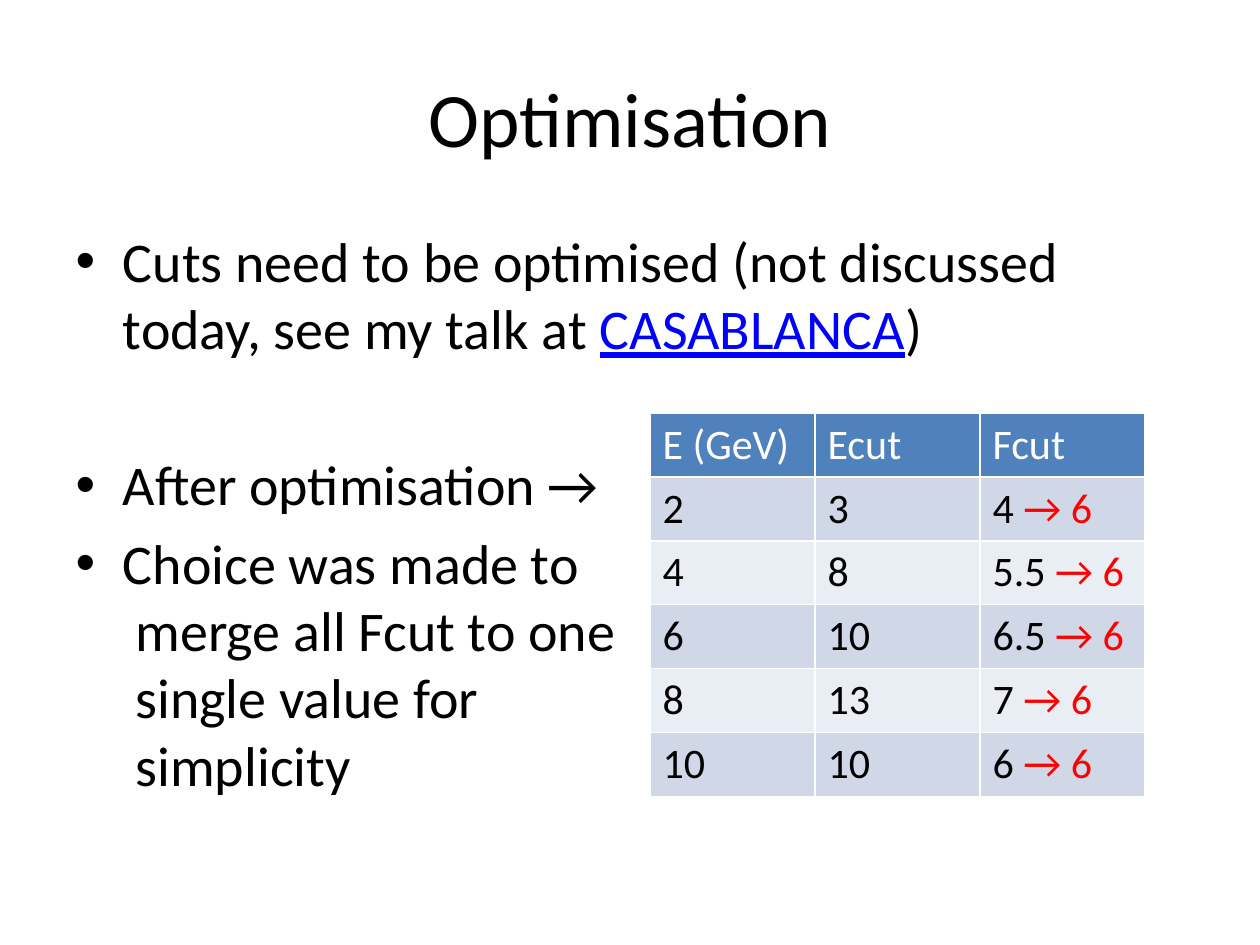
from pptx import Presentation
from pptx.dml.color import RGBColor
from pptx.enum.text import MSO_ANCHOR, MSO_AUTO_SIZE, PP_ALIGN
from pptx.oxml import parse_xml
from pptx.oxml.ns import nsdecls
from pptx.util import Pt

SCALE = 914400 / 126
BLACK, WHITE, RED, BLUE = "000000", "FFFFFF", "FF0000", "0000FF"
HEAD, BANDS = "4F81BD", ("E9EDF4", "D0D8E8")
hue = RGBColor.from_string


def px(*sizes):
    return [round(size * SCALE) for size in sizes]


def write(para, text, size, color=BLACK, under=False):
    form = {"name": "Calibri", "size": Pt(size), "bold": False, "underline": under}
    for num, line in enumerate(text.split("\n")):
        if num:
            para.add_line_break()
        run = para.add_run()
        run.text = line
        for key, value in form.items():
            setattr(run.font, key, value)
        run.font.color.rgb = hue(color)


deck = Presentation()
deck.slide_width, deck.slide_height = px(1260, 945)
slide = deck.slides.add_slide(deck.slide_layouts[1])
title, body = slide.placeholders

places = [(title, (63, 38, 1134, 157)), (body, (63, 220, 1134, 624))]
for shape, place in places:
    shape.left, shape.top, shape.width, shape.height = px(*place)
    shape.text_frame.word_wrap = True
    shape.text_frame.auto_size = MSO_AUTO_SIZE.NONE

title.text_frame.vertical_anchor = MSO_ANCHOR.MIDDLE
para = title.text_frame.paragraphs[0]
para.alignment = PP_ALIGN.CENTER
write(para, "Optimisation", 44)

points = [
    (0, [
        ("Cuts need to be optimised (not discussed today, see my talk at ",),
        ("CASABLANCA", BLUE, True),
        (")",),
    ]),
    (51, [("After optimisation →",)]),
    (6.4, [("Choice was made to\n merge all Fcut to one\n single value for\n simplicity",)]),
]
frame = body.text_frame
for num, (gap, parts) in enumerate(points):
    para = frame.add_paragraph() if num else frame.paragraphs[0]
    para.space_before = Pt(gap)
    for text, *look in parts:
        write(para, text, 32, *look)

rows = [
    ("E (GeV)", "Ecut", "Fcut"),
    ("2", "3", "4 "),
    ("4", "8", "5.5 "),
    ("6", "10", "6.5 "),
    ("8", "13", "7 "),
    ("10", "10", "6 "),
]
table = slide.shapes.add_table(len(rows), 3, *px(650, 413, 495, 378)).table
for r, row in enumerate(rows):
    for c, text in enumerate(row):
        cell = table.cell(r, c)
        props = cell._tc.get_or_add_tcPr()
        for side in "LRTB":
            props.append(parse_xml(
                f'<a:ln{side} {nsdecls("a")} w="12700"><a:solidFill>'
                f'<a:srgbClr val="{WHITE}"/></a:solidFill></a:ln{side}>'))
        cell.fill.solid()
        cell.fill.fore_color.rgb = hue(BANDS[r % 2] if r else HEAD)
        para = cell.text_frame.paragraphs[0]
        write(para, text, 24, BLACK if r else WHITE)
        if r and c == 2:
            write(para, "→ 6", 24, RED)

deck.save("out.pptx")
